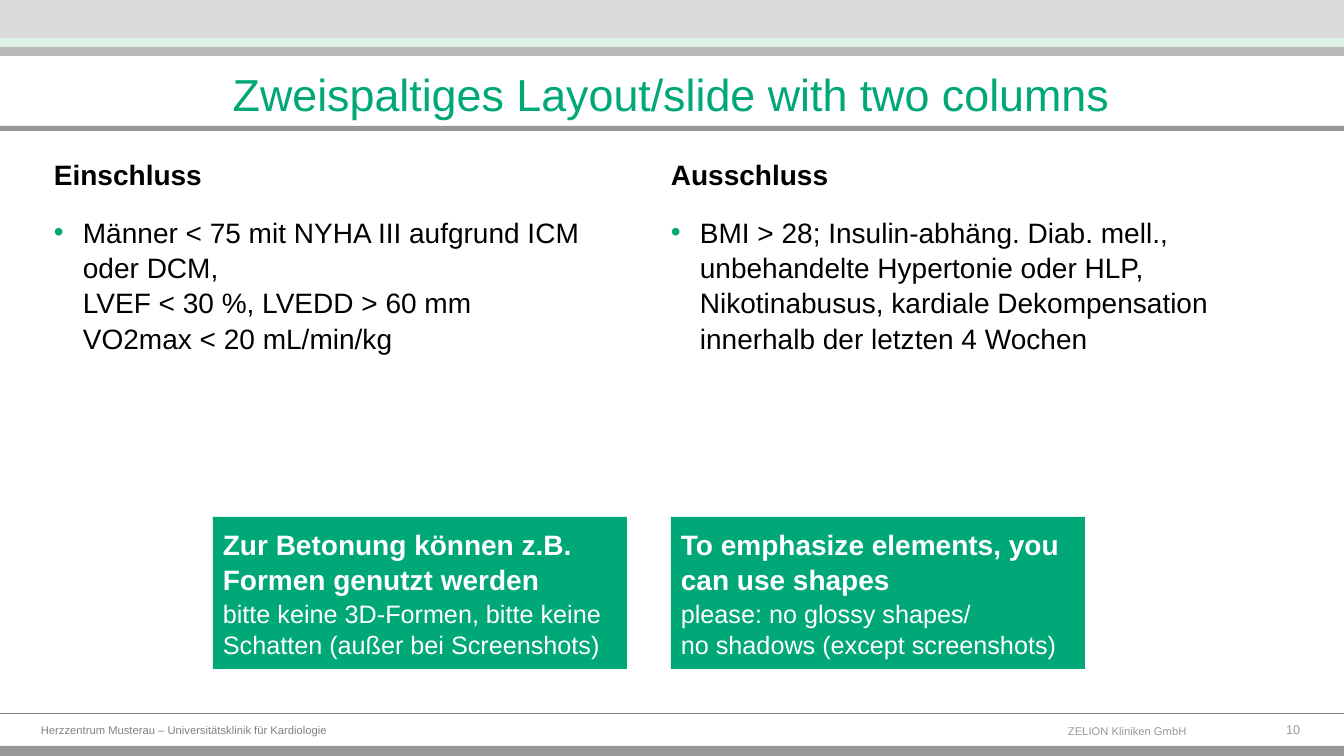
"""Build a two-column slide with inclusion and exclusion criteria and two callouts."""
from dataclasses import dataclass

from lxml.etree import SubElement
from pptx import Presentation
from pptx.dml.color import RGBColor
from pptx.enum.shapes import MSO_CONNECTOR, MSO_SHAPE
from pptx.enum.text import MSO_ANCHOR as ANCHOR, MSO_AUTO_SIZE as FIT, PP_ALIGN as ALIGN
from pptx.oxml.ns import qn
from pptx.util import Emu, Pt

EMU_PER_PX = 12192000 / 1344
WIDTH, HEIGHT = 1344, 756
LINE_SPACING = 1.05
COLORS = {
    "green": "00A877", "mint": "DFF0E7", "light": "DADADA", "silver": "BABABA",
    "gray": "989898", "rule": "808080", "footer": "818181",
    "black": "000000", "white": "FFFFFF",
}


@dataclass(frozen=True)
class Bar:
    top: int
    height: int
    color: str


@dataclass(frozen=True)
class Column:
    left: int
    heading: str
    criteria: str


@dataclass(frozen=True)
class Callout:
    left: int
    heading: str
    detail: str


@dataclass(frozen=True)
class Footer:
    left: int
    top: int
    width: int
    text: str
    size: int
    color: str
    align: ALIGN
    anchor: ANCHOR


BARS = [
    Bar(47, 9, "silver"), Bar(38, 9, "mint"), Bar(0, 38, "light"),
    Bar(746, 10, "gray"), Bar(126, 5, "gray"),
]
COLUMNS = [
    Column(44, "Einschluss",
           "Männer < 75 mit NYHA III aufgrund ICM oder DCM,\n"
           "LVEF < 30 %, LVEDD > 60 mm\nVO2max < 20 mL/min/kg"),
    Column(661, "Ausschluss",
           "BMI > 28; Insulin-abhäng. Diab. mell.,\n"
           "unbehandelte Hypertonie oder HLP,\n"
           "Nikotinabusus, kardiale Dekompensation\n"
           "innerhalb der letzten 4 Wochen"),
]
CALLOUTS = [
    Callout(213, "Zur Betonung können z.B. Formen genutzt werden",
            "bitte keine 3D-Formen, bitte keine Schatten (außer bei Screenshots)"),
    Callout(671, "To emphasize elements, you can use shapes",
            "please: no glossy shapes/\nno shadows (except screenshots)"),
]
FOOTERS = [
    Footer(31, 717, 519, "Herzzentrum Musterau – Universitätsklinik für Kardiologie",
           8, "footer", ALIGN.LEFT, ANCHOR.BOTTOM),
    Footer(1058, 719, 196, "ZELION Kliniken GmbH", 8, "gray", ALIGN.LEFT, ANCHOR.TOP),
    Footer(1243, 717, 67, "10", 9, "gray", ALIGN.RIGHT, ANCHOR.MIDDLE),
]


def px(n: int) -> Emu:
    return Emu(round(n * EMU_PER_PX))


def rgb(name: str) -> RGBColor:
    return RGBColor.from_string(COLORS[name])


def write(p, text: str, *, size: int, color: str = "black", bold: bool = False,
          align: ALIGN = ALIGN.LEFT) -> None:
    p.alignment = align
    for i, line in enumerate(text.split("\n")):
        if i:
            p.add_line_break()
        r = p.add_run()
        r.text = line
        r.font.name = "Arial"
        r.font.size = Pt(size)
        r.font.bold = bold
        r.font.color.rgb = rgb(color)


def add_bullet(p, color: str) -> None:
    pPr = p._p.get_or_add_pPr()
    pPr.set("marL", str(px(29)))
    pPr.set("indent", str(-px(29)))
    SubElement(SubElement(pPr, qn("a:buClr")), qn("a:srgbClr"), val=COLORS[color])
    SubElement(pPr, qn("a:buFont"), typeface="Arial")
    SubElement(pPr, qn("a:buChar"), char="•")


def add_rect(slide, left: int, top: int, width: int, height: int, color: str):
    sp = slide.shapes.add_shape(MSO_SHAPE.RECTANGLE, px(left), px(top), px(width), px(height))
    sp.shadow.inherit = False
    sp.fill.solid()
    sp.fill.fore_color.rgb = rgb(color)
    sp.line.fill.background()
    return sp


def add_text_frame(slide, left: int, top: int, width: int, height: int):
    tf = slide.shapes.add_textbox(px(left), px(top), px(width), px(height)).text_frame
    tf.word_wrap = True
    return tf


def add_title(slide, text: str) -> None:
    sp = slide.shapes.title
    sp.left, sp.top, sp.width, sp.height = px(47), px(26), px(1249), px(100)
    tf = sp.text_frame
    tf.auto_size = FIT.NONE
    tf.vertical_anchor = ANCHOR.BOTTOM
    write(tf.paragraphs[0], text, size=32, color="green", align=ALIGN.CENTER)


def add_footer_rule(slide) -> None:
    line = slide.shapes.add_connector(MSO_CONNECTOR.STRAIGHT, 0, px(714), px(WIDTH), px(714))
    line.line.color.rgb = rgb("rule")
    line.line.width = Pt(0.75)
    SubElement(line._element.spPr, qn("a:effectLst"))


def add_footer(slide, footer: Footer) -> None:
    tf = add_text_frame(slide, footer.left, footer.top, footer.width, 25)
    tf.vertical_anchor = footer.anchor
    write(tf.paragraphs[0], footer.text, size=footer.size, color=footer.color,
          align=footer.align)


def add_column(slide, column: Column) -> None:
    tf = add_text_frame(slide, column.left, 151, 594, 537)
    heading, criteria = tf.paragraphs[0], tf.add_paragraph()
    add_bullet(criteria, "green")
    heading.line_spacing = criteria.line_spacing = LINE_SPACING
    criteria.space_before = Pt(16)
    write(heading, column.heading, size=20, bold=True)
    write(criteria, column.criteria, size=20)


def add_callout(slide, callout: Callout) -> None:
    tf = add_rect(slide, callout.left, 517, 414, 152, "green").text_frame
    tf.word_wrap = True
    tf.vertical_anchor = ANCHOR.MIDDLE
    p = tf.paragraphs[0]
    p.line_spacing = LINE_SPACING
    write(p, callout.heading, size=20, color="white", bold=True)
    p.add_line_break()
    write(p, callout.detail, size=18, color="white")


def main() -> None:
    prs = Presentation()
    prs.slide_width, prs.slide_height = px(WIDTH), px(HEIGHT)
    slide = prs.slides.add_slide(prs.slide_layouts[5])
    for bar in BARS:
        add_rect(slide, 0, bar.top, WIDTH, bar.height, bar.color)
    add_footer_rule(slide)
    for footer in FOOTERS:
        add_footer(slide, footer)
    add_title(slide, "Zweispaltiges Layout/slide with two columns")
    for column in COLUMNS:
        add_column(slide, column)
    for callout in CALLOUTS:
        add_callout(slide, callout)
    prs.save("out.pptx")


if __name__ == "__main__":
    main()
